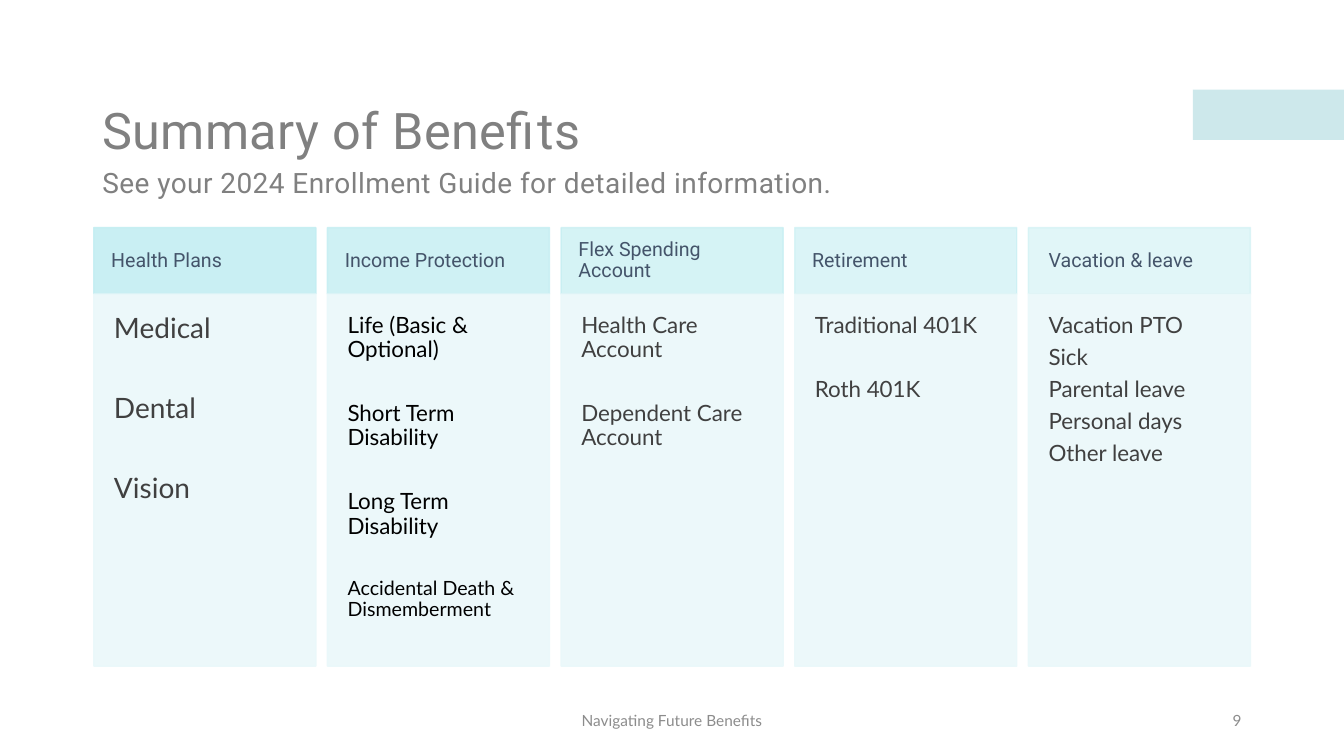
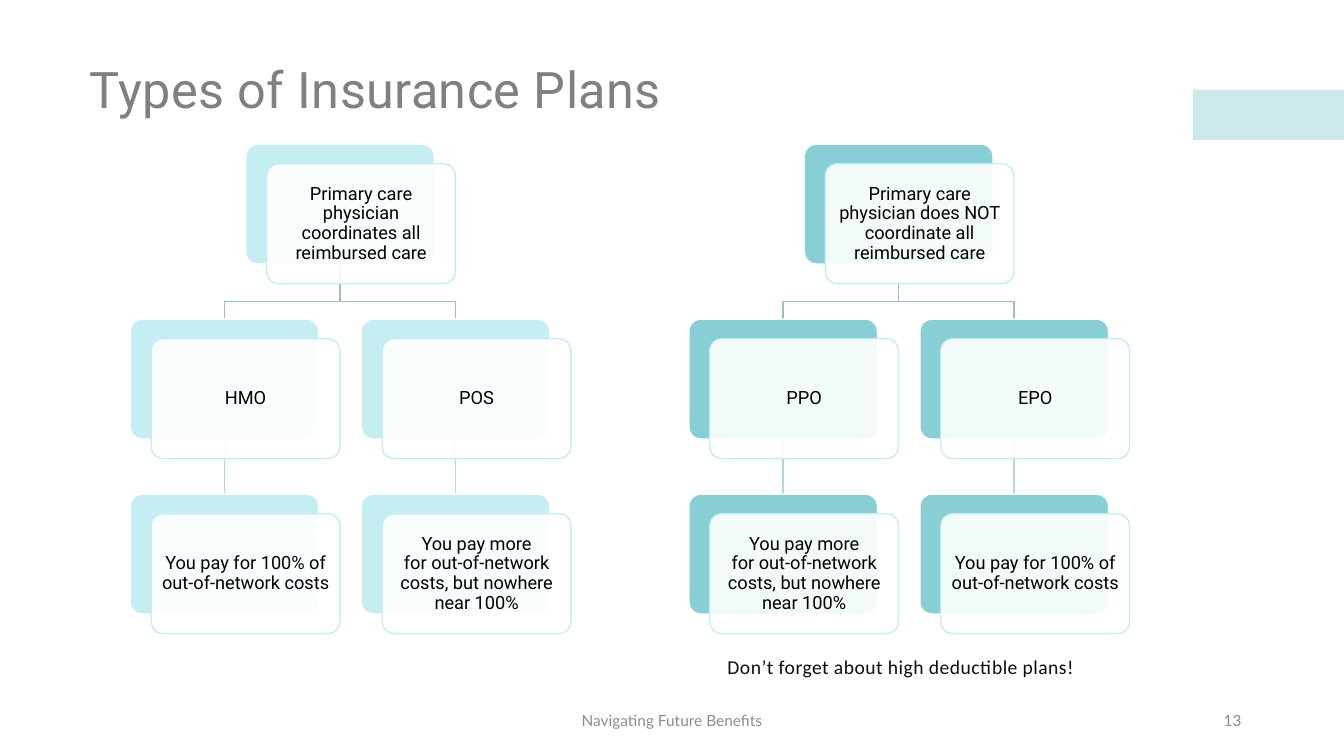
import dataclasses
import lxml.etree
import pptx
import pptx.dml.color
import pptx.enum.shapes
import pptx.enum.text
import pptx.oxml.ns
import pptx.util

Pt = pptx.util.Pt
RGB = pptx.dml.color.RGBColor.from_string
qn = pptx.oxml.ns.qn
SHAPE = pptx.enum.shapes.MSO_SHAPE
ALIGN = pptx.enum.text.PP_ALIGN
ANCHOR = pptx.enum.text.MSO_ANCHOR


@dataclasses.dataclass(frozen=True)
class Theme:
    heading: str = "Roboto"
    body: str = "Lato"
    note: str = "Calibri"
    white: str = "FFFFFF"
    black: str = "000000"
    gray: str = "808080"
    footer: str = "8C8C8C"
    dark: str = "404040"
    slate: str = "44546A"
    ink: str = "0D0D0D"
    band: str = "9CD3D9"
    aqua: str = "C4EEF2"
    pale: str = "EAF8FA"
    teal: str = "87CED5"
    elbow: str = "9DBFC2"
    stem: str = "B2D8DC"
    title_size: int = 36
    large_size: int = 20
    item_size: int = 16
    label_size: int = 14
    node_size: int = 13
    footer_size: int = 11


T = Theme()


def add_box(s, x, y, w, h, fill, line=None, alpha=100, line_alpha=100, kind=SHAPE.RECTANGLE):
    sp = s.shapes.add_shape(kind, Pt(x), Pt(y), Pt(w), Pt(h))
    sp.shadow.inherit = False
    sp.fill.solid()
    sp.fill.fore_color.rgb = RGB(fill)
    if line:
        sp.line.color.rgb = RGB(line)
        sp.line.width = Pt(1)
    else:
        sp.line.fill.background()
    if kind == SHAPE.ROUNDED_RECTANGLE:
        sp.adjustments[0] = 0.1
    colors = sp.element.spPr.iter(qn("a:srgbClr"))
    for color, opacity in zip(list(colors), (alpha, line_alpha)):
        if opacity < 100:
            lxml.etree.SubElement(color, qn("a:alpha"), val=str(opacity * 1000))
    return sp


def write(sp, items, font, color, align=ALIGN.LEFT, anchor=ANCHOR.MIDDLE,
          inset=None, gap=0, spacing=0.9, tracking=0):
    tf = sp.text_frame
    tf.word_wrap = True
    tf.vertical_anchor = anchor
    if inset is not None:
        tf.margin_left = tf.margin_right = tf.margin_top = tf.margin_bottom = Pt(inset)
    for i, (text, size) in enumerate(items):
        p = tf.add_paragraph() if i else tf.paragraphs[0]
        p.text = text
        p.alignment = align
        p.line_spacing = spacing
        if i:
            p.space_before = Pt(gap)
        for r in p.runs:
            r.font.name = font
            r.font.size = Pt(size)
            r.font.color.rgb = RGB(color)
            if tracking:
                r.font._element.set("spc", str(tracking))


prs = pptx.Presentation()
prs.slide_width = Pt(960)
prs.slide_height = Pt(540)

slides = []
for number in ("9", "13"):
    s = prs.slides.add_slide(prs.slide_layouts[6])
    slides.append(s)
    add_box(s, 852, 64, 108, 36, T.band, alpha=50)
    for x, w, text, align in (
        (318, 324, "Navigating Future Benefits", ALIGN.CENTER),
        (678, 216, number, ALIGN.RIGHT),
    ):
        sp = s.shapes.add_textbox(Pt(x), Pt(500.4), Pt(w), Pt(28.8))
        write(sp, [(text, T.footer_size)], T.body, T.footer, align, spacing=1)

summary, plans = slides
for s, x, y, w, text, size, font, color in (
    (summary, 66, 43.2, 888, "Summary of Benefits", T.title_size, T.heading, T.gray),
    (summary, 66, 79.2, 888, "See your 2024 Enrollment Guide for detailed information.",
     T.large_size, T.heading, T.gray),
    (plans, 57, 13.5, 888, "Types of Insurance Plans", T.title_size, T.heading, T.gray),
    (plans, 512.6, 424.8, 440, "Don’t forget about high deductible plans!",
     T.label_size, T.note, T.ink),
):
    sp = s.shapes.add_textbox(Pt(x), Pt(y), Pt(w), Pt(104.4))
    write(sp, [(text, size)], font, color, tracking=30)

columns = [
    ("Health Plans", T.dark, 12.4, 35.6,
     [("Medical", T.large_size), ("Dental", T.large_size), ("Vision", T.large_size)]),
    ("Income Protection", T.black, 12.4, 28.5,
     [("Life (Basic & Optional)", T.item_size), ("Short Term Disability", T.item_size),
      ("Long Term Disability", T.item_size),
      ("Accidental Death & Dismemberment", T.label_size)]),
    ("Flex Spending Account", T.dark, 12.4, 28.5,
     [("Health Care Account", T.item_size), ("Dependent Care Account", T.item_size)]),
    ("Retirement", T.dark, 12.4, 28.5,
     [("Traditional 401K", T.item_size), ("Roth 401K", T.item_size)]),
    ("Vacation & leave", T.dark, 14.4, 5.6,
     [("Vacation PTO", T.item_size), ("Sick", T.item_size), ("Parental leave", T.item_size),
      ("Personal days", T.item_size), ("Other leave", T.item_size)]),
]
for i, (header, color, inset, gap, items) in enumerate(columns):
    x = 67 + i * 166.9
    alpha = 90 - i * 10
    sp = add_box(summary, x, 162.6, 158.6, 47.4, T.aqua, T.aqua, alpha, alpha)
    write(sp, [(header, T.label_size)], T.heading, T.slate, inset=inset)
    sp = add_box(summary, x, 210, 158.6, 265.8, T.pale, T.pale, 90, 90)
    write(sp, items, T.body, color, anchor=ANCHOR.TOP, inset=14.4, gap=gap)

node_w, node_h = 134.8, 85.6
pitch_x, pitch_y = 165, 125
top = 103
full_cost = "You pay for 100% of out-of-network costs"
partial_cost = "You pay more\vfor out-of-network costs, but nowhere near 100%"
trees = [
    (93, T.aqua, "Primary care physician coordinates all reimbursed care",
     [("HMO", full_cost), ("POS", partial_cost)]),
    (492, T.teal, "Primary care physician does NOT coordinate all reimbursed care",
     [("PPO", partial_cost), ("EPO", full_cost)]),
]
for left, color, root, branches in trees:
    nodes = [(left + pitch_x / 2, top, root)]
    root_x = left + pitch_x / 2 + node_w / 2
    for i, branch in enumerate(branches):
        x = left + i * pitch_x
        mid = x + node_w / 2
        for row, text in enumerate(branch, 1):
            nodes.append((x, top + row * pitch_y, text))

        fb = plans.shapes.build_freeform(Pt(root_x), Pt(top + node_h))
        fb.add_line_segments(
            [(Pt(root_x), Pt(215.3)), (Pt(mid), Pt(215.3)), (Pt(mid), Pt(top + pitch_y))],
            close=False)
        elbow = fb.convert_to_shape()
        elbow.shadow.inherit = False
        elbow.fill.background()
        elbow.line.color.rgb = RGB(T.elbow)
        elbow.line.width = Pt(1)

        stem = plans.shapes.add_connector(
            pptx.enum.shapes.MSO_CONNECTOR.STRAIGHT,
            Pt(mid), Pt(top + pitch_y + node_h), Pt(mid), Pt(top + 2 * pitch_y))
        stem.line.color.rgb = RGB(T.stem)
        stem.line.width = Pt(1)
        lxml.etree.SubElement(stem.element.spPr, qn("a:effectLst"))

    for x, y, text in nodes:
        add_box(plans, x, y, node_w, node_h, color, T.white, kind=SHAPE.ROUNDED_RECTANGLE)
        sp = add_box(plans, x + 15, y + 14, node_w, node_h, T.white, T.aqua, 90,
                     kind=SHAPE.ROUNDED_RECTANGLE)
        write(sp, [(text, T.node_size)], T.heading, T.black, ALIGN.CENTER, inset=3.6)

prs.save("out.pptx")
